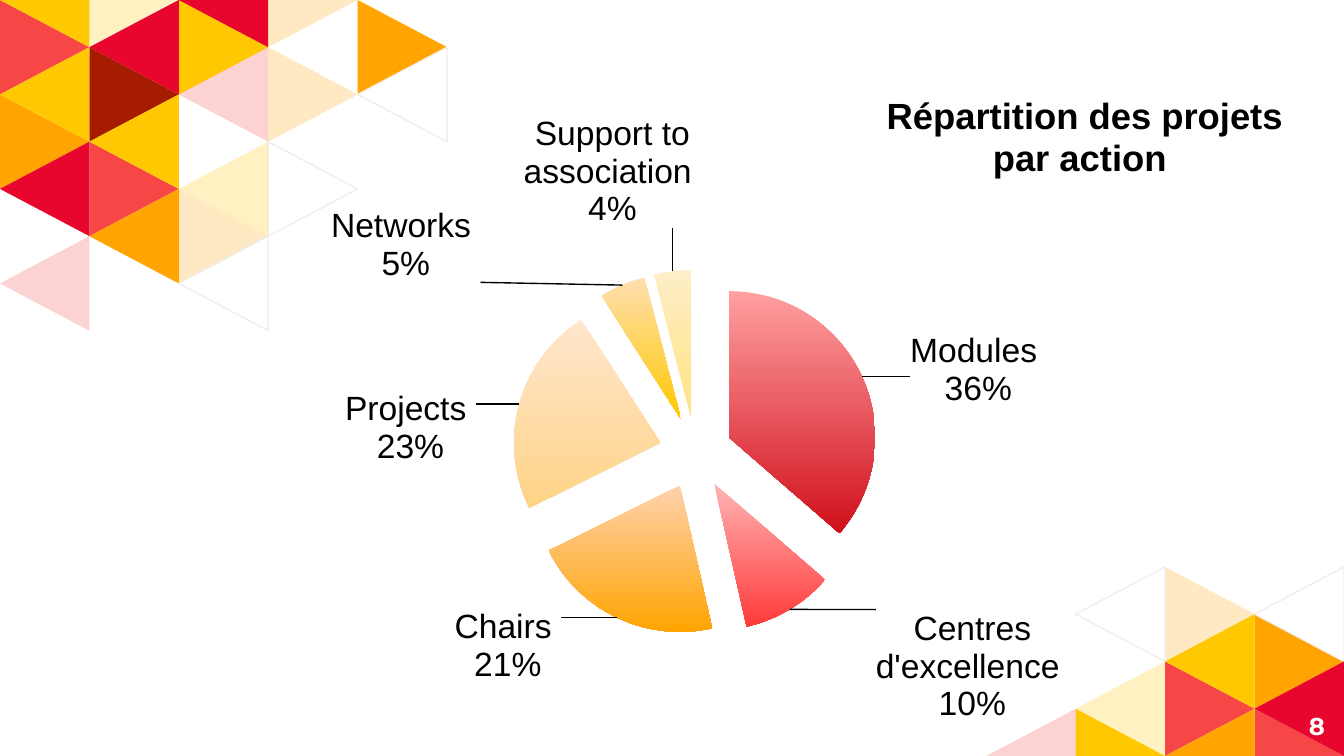
import pptx
import pptx.chart.data
import pptx.dml.color
import pptx.enum.chart
import pptx.enum.text
import pptx.oxml
import pptx.oxml.ns
import pptx.util
from dataclasses import dataclass
from pptx.util import Cm

qn = pptx.oxml.ns.qn
NS = pptx.oxml.ns.nsdecls("c", "a")


@dataclass(frozen=True)
class Theme:
    text: str = "000000"
    white: str = "FFFFFF"
    outline: str = "EFEFEF"
    font: str = "Arial"
    number_font: str = "Montserrat"
    chart_size: int = 16
    title_size: float = 19.5
    label_size: int = 18
    number_size: int = 13


THEME = Theme()
# key: fill colour, opacity in percent
TILES = {
    "red": ("E8062F", 100), "coral": ("F64646", 100), "brown": ("A61C00", 100),
    "orange": ("FFA400", 100), "yellow": ("FFC800", 100),
    "pale coral": ("F64646", 24), "pale orange": ("FFA400", 24),
    "pale yellow": ("FFC800", 24), "outlined": (THEME.white, 100),
}
WIDTH, HEIGHT, ROWS = 25.4, 14.29, 16
COL, ROW = 1.69, HEIGHT / ROWS

# direction of the tip, column, top row, tile
TOP_LEFT = [
    (">", 0, 2, "orange"), (">", 1, 1, "brown"), (">", 1, 3, "coral"),
    (">", 3, 1, "pale orange"), (">", 2, 4, "pale orange"), (">", 3, 3, "outlined"),
    (">", 0, 0, "coral"), (">", 1, -1, "pale yellow"), (">", 2, 0, "yellow"),
    (">", 3, -1, "pale orange"), (">", 4, 0, "orange"),
    ("<", 0, 1, "yellow"), ("<", 1, 2, "yellow"), ("<", 0, 3, "red"),
    ("<", 1, 4, "orange"), ("<", 0, 5, "pale coral"), ("<", 2, 1, "pale coral"),
    ("<", 2, 3, "pale yellow"), ("<", 2, 5, "outlined"), ("<", 4, 1, "outlined"),
    ("<", 0, -1, "yellow"), ("<", 1, 0, "red"), ("<", 2, -1, "red"),
]
BOTTOM_RIGHT = [
    (">", 2, 12, "pale orange"), (">", 3, 13, "orange"), (">", 1, 15, "yellow"),
    (">", 2, 14, "coral"), (">", 3, 15, "coral"),
    ("<", 1, 12, "outlined"), ("<", 3, 12, "outlined"), ("<", 2, 13, "yellow"),
    ("<", 1, 14, "pale yellow"), ("<", 2, 15, "orange"), ("<", 3, 14, "red"),
    ("<", 0, 15, "pale coral"),
]
# category, value, top colour, bottom colour, label shift in percent of the chart
SLICES = [
    ("Modules ", 36, "FF9FA0", "D0101C", 3.2, 4.6),
    ("Centres d'excellence ", 10, "FFB4B4", "FF3A3A", 6.4, -0.9),
    ("Chairs ", 21, "FFD2AE", "FFA400", -4.1, -2.3),
    ("Projects ", 23, "FFE6CC", "FFD488", -2.8, 8.6),
    ("Networks ", 5, "FFDFB0", "FFC800", -10.8, 0.6),
    ("Support to association ", 4, "FFEEC8", "FFE37F", 2.3, -4.8),
]
SERIES = ["Series 1", "Series 2"]
TITLE = ["Répartition des projets ", "par action  "]


def rgb(value):
    return pptx.dml.color.RGBColor.from_string(value)


def set_font(font, **values):
    color = values.pop("color")
    for name, value in values.items():
        setattr(font, name, value)
    font.color.rgb = rgb(color)


def add_tile(slide, left, tip, col, row, tile):
    """Add one triangle of the grid, cut off at the slide's top and bottom."""
    base, point = (col, col + 1) if tip == ">" else (col + 1, col)
    corners = [(base, row), (point, row + 1), (base, row + 2)]
    points = [(Cm(left + c * COL), Cm(min(max(r, 0), ROWS) * ROW)) for c, r in corners]
    builder = slide.shapes.build_freeform(*points[0], scale=1.0)
    builder.add_line_segments(points[1:], close=True)
    sp = builder.convert_to_shape()
    sp.shadow.inherit = False
    color, opacity = TILES[tile]
    sp.fill.solid()
    sp.fill.fore_color.rgb = rgb(color)
    if opacity < 100:
        clr = sp.fill._xPr.find(".//" + qn("a:srgbClr"))
        clr.append(pptx.oxml.parse_xml(f'<a:alpha {NS} val="{opacity * 1000}"/>'))
    if tile == "outlined":
        sp.line.color.rgb = rgb(THEME.outline)
        sp.line.width = pptx.util.Pt(0.75)
    else:
        sp.line.fill.background()


def layout_xml(x, y, w=None, h=None, target="", edge=True):
    """Manual chart layout; all numbers are percent of the chart's size."""
    parts = [f'<c:layoutTarget val="{target}"/>'] if target else []
    if edge:
        parts += ['<c:xMode val="edge"/>', '<c:yMode val="edge"/>']
    sizes = {"x": x, "y": y, "w": w, "h": h}
    parts += [f'<c:{k} val="{v / 100:.3f}"/>' for k, v in sizes.items() if v is not None]
    return f'<c:layout {NS}><c:manualLayout>{"".join(parts)}</c:manualLayout></c:layout>'


def set_layout(parent, index, xml):
    for old in parent.findall(qn("c:layout")):
        parent.remove(old)
    parent.insert(index, pptx.oxml.parse_xml(xml))


def labels_xml():
    style = (
        '<c:numFmt formatCode="0%" sourceLinked="0"/><c:spPr><a:noFill/></c:spPr>'
        f'<c:txPr><a:bodyPr/><a:p><a:pPr><a:defRPr sz="{THEME.label_size * 100}">'
        f'<a:solidFill><a:srgbClr val="{THEME.text}"/></a:solidFill>'
        f'<a:latin typeface="{THEME.font}"/></a:defRPr></a:pPr>'
        '<a:endParaRPr lang="fr-FR"/></a:p></c:txPr><c:dLblPos val="outEnd"/>'
        '<c:showLegendKey val="0"/><c:showVal val="0"/><c:showCatName val="1"/>'
        '<c:showSerName val="0"/><c:showPercent val="1"/><c:showBubbleSize val="0"/>'
        '<c:separator>\n</c:separator>')
    single = "".join(
        f'<c:dLbl><c:idx val="{i}"/>{layout_xml(dx, dy, edge=False)}{style}</c:dLbl>'
        for i, (*_, dx, dy) in enumerate(SLICES))
    return (f'<c:dLbls {NS}>{single}{style}<c:showLeaderLines val="1"/><c:leaderLines>'
            f'<c:spPr><a:ln w="9525"><a:solidFill><a:srgbClr val="{THEME.text}"/>'
            '</a:solidFill></a:ln></c:spPr></c:leaderLines></c:dLbls>')


def add_title(chart):
    tf = chart.chart_title.text_frame
    for i, line in enumerate(TITLE):
        p = tf.paragraphs[0] if i == 0 else tf.add_paragraph()
        r = p.add_run()
        r.text = line
        set_font(r.font, name=THEME.font, size=pptx.util.Pt(THEME.title_size),
                 bold=True, color=THEME.text)
    title = chart.chart_title._element
    set_layout(title, 1, layout_xml(64.5, 10.2))
    title.find(qn("c:overlay")).set("val", "1")


def format_slices(series):
    for i, (_, _, top, bottom, _, _) in enumerate(SLICES):
        point = series.points[i].format
        point.fill.gradient()
        point.fill.gradient_angle = 270
        for stop, color in zip(point.fill.gradient_stops, (top, bottom)):
            stop.color.rgb = rgb(color)
        point.line.fill.background()
    ser = series._element
    ser.find(qn("c:dPt")).addprevious(pptx.oxml.parse_xml(f'<c:explosion {NS} val="25"/>'))
    ser.find(qn("c:cat")).addprevious(pptx.oxml.parse_xml(labels_xml()))


def add_pie(slide):
    data = pptx.chart.data.CategoryChartData()
    data.categories = [s[0] for s in SLICES]
    for name in SERIES:
        data.add_series(name, [s[1] for s in SLICES])
    chart = slide.shapes.add_chart(
        pptx.enum.chart.XL_CHART_TYPE.PIE, Cm(1.02), Cm(0.25), Cm(24.28), Cm(14.02), data).chart
    chart.replace_data(data)  # a new pie takes only the first series
    chart.has_legend = False
    set_font(chart.font, name=THEME.font, size=pptx.util.Pt(THEME.chart_size),
             color=THEME.text)
    add_title(chart)
    plot = chart.plots[0]
    plot.vary_by_categories = True
    for series in plot.series:
        format_slices(series)
    area = chart._chartSpace.find(".//" + qn("c:plotArea"))
    set_layout(area, 0, layout_xml(35.7, 34.6, 28.5, 49.3, target="inner"))


def add_page_number(slide, text):
    tf = slide.shapes.add_textbox(Cm(23.77), Cm(13.18), Cm(1.52), Cm(1.09)).text_frame
    frame = dict.fromkeys(
        ("margin_left", "margin_right", "margin_top", "margin_bottom"), Cm(0.25))
    frame.update(word_wrap=True, vertical_anchor=pptx.enum.text.MSO_ANCHOR.MIDDLE)
    for name, value in frame.items():
        setattr(tf, name, value)
    p = tf.paragraphs[0]
    p.alignment = pptx.enum.text.PP_ALIGN.RIGHT
    r = p.add_run()
    r.text = text
    set_font(r.font, name=THEME.number_font, size=pptx.util.Pt(THEME.number_size),
             bold=True, color=THEME.white)


def main():
    prs = pptx.Presentation()
    prs.slide_width, prs.slide_height = Cm(WIDTH), Cm(HEIGHT)
    slide = prs.slides.add_slide(prs.slide_layouts[6])
    for left, tiles in ((0, TOP_LEFT), (WIDTH - 4 * COL, BOTTOM_RIGHT)):
        for tile in tiles:
            add_tile(slide, left, *tile)
    add_page_number(slide, "8")
    add_pie(slide)
    prs.save("out.pptx")


if __name__ == "__main__":
    main()
